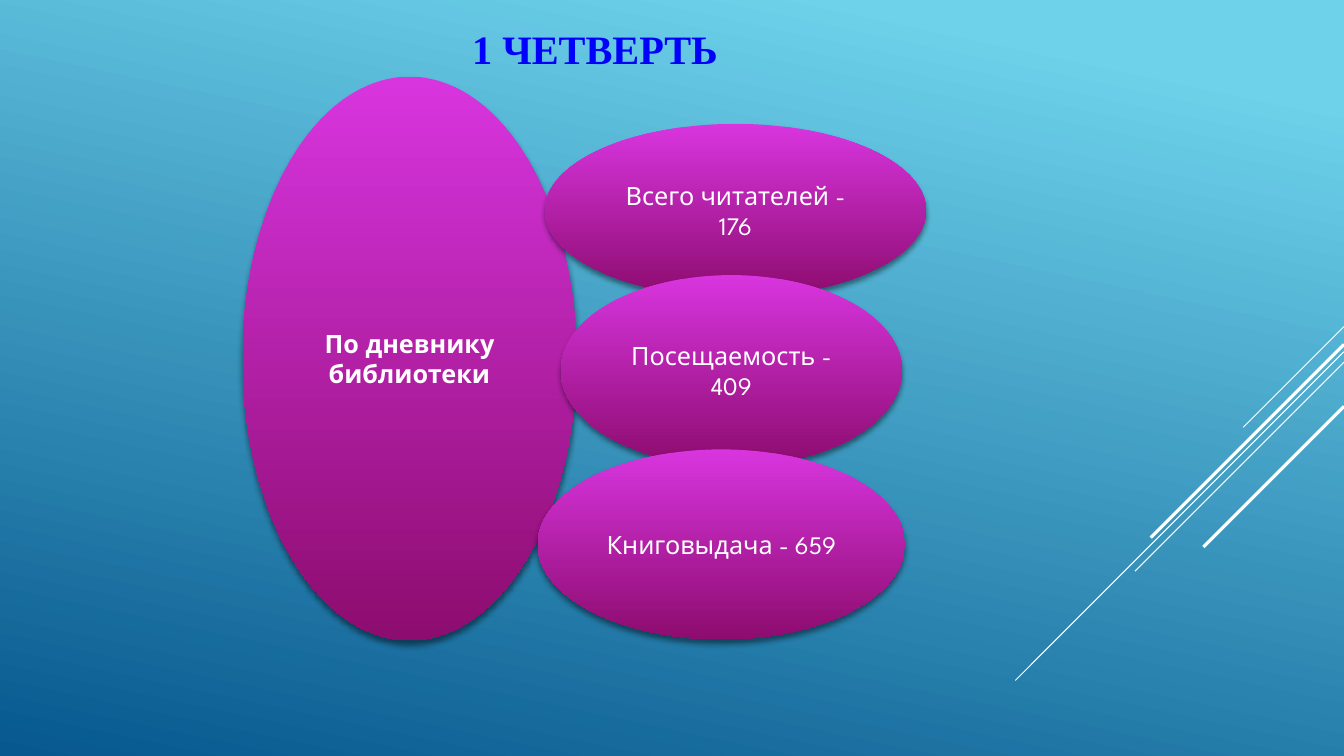
from dataclasses import dataclass

from lxml.etree import SubElement
from pptx import Presentation
from pptx.dml.color import RGBColor
from pptx.dml.fill import FillFormat
from pptx.enum.shapes import MSO_CONNECTOR as CONN, MSO_SHAPE as SHAPE
from pptx.enum.text import MSO_ANCHOR as ANCHOR, PP_ALIGN as ALIGN
from pptx.oxml.ns import qn
from pptx.slide import Slide
from pptx.text.text import TextFrame
from pptx.util import Emu, Pt

EMU_PER_PX = 9525
SLIDE_W, SLIDE_H = 1280, 720


@dataclass(frozen=True)
class Theme:
    sky: tuple[str, str] = ("6ED2EB", "06588E")
    bubble: tuple[str, str] = ("D835DF", "8D0C6F")
    white: str = "FFFFFF"
    title: str = "0000FF"
    shadow: str = "000000"
    title_font: str = "Times New Roman"
    body_font: str = "League Spartan"
    title_size: float = 28.8
    body_size: float = 18
    thin: float = 0.75
    thick: float = 2.25


THEME = Theme()


@dataclass(frozen=True)
class Bubble:
    text: str
    left: int
    top: int
    width: int
    height: int
    kind: SHAPE = SHAPE.FLOWCHART_CONNECTOR
    bold: bool = False


@dataclass(frozen=True)
class Ray:
    """A 45-degree line running down and left from the right edge."""
    top: int
    run: int
    weight: float = THEME.thin


RAYS = [
    Ray(311, 96),
    Ray(335, 313),
    Ray(345, 199),
    Ray(328, 184, THEME.thick),
    Ray(387, 134, THEME.thick),
]
BUBBLES = [
    Bubble("По дневнику библиотеки", 231, 73, 318, 537, SHAPE.OVAL, True),
    Bubble("Всего читателей - 176", 519, 118, 363, 165),
    Bubble("Посещаемость - 409", 534, 262, 325, 182),
    Bubble("Книговыдача - 659", 512, 428, 350, 181),
]


def px(n: int) -> Emu:
    return Emu(n * EMU_PER_PX)


def rgb(color: str) -> RGBColor:
    return RGBColor.from_string(color)


def fill_gradient(fill: FillFormat, colors: tuple[str, str],
                  clockwise: int, start: float = 0) -> None:
    fill.gradient()
    fill.gradient_angle = 360 - clockwise
    for stop, color, position in zip(fill.gradient_stops, colors, (start, 1)):
        stop.color.rgb = rgb(color)
        stop.position = position


def set_text(tf: TextFrame, text: str, font: str, size: float, color: str,
             bold: bool, align: ALIGN) -> None:
    tf.text = text
    tf.word_wrap = True
    tf.vertical_anchor = ANCHOR.MIDDLE
    p = tf.paragraphs[0]
    p.alignment = align
    r = p.runs[0]
    r.font.name, r.font.size, r.font.bold = font, Pt(size), bold
    r.font.color.rgb = rgb(color)


def add_ray(slide: Slide, ray: Ray) -> None:
    line = slide.shapes.add_connector(
        CONN.STRAIGHT, px(SLIDE_W), px(ray.top),
        px(SLIDE_W - ray.run), px(ray.top + ray.run))
    line.line.color.rgb = rgb(THEME.white)
    line.line.width = Pt(ray.weight)
    SubElement(line._element.spPr, qn("a:effectLst"))


def add_bubble(slide: Slide, bubble: Bubble) -> None:
    sp = slide.shapes.add_shape(
        bubble.kind, px(bubble.left), px(bubble.top),
        px(bubble.width), px(bubble.height))
    fill_gradient(sp.fill, THEME.bubble, 90)
    sp.line.fill.background()
    set_text(sp.text_frame, bubble.text, THEME.body_font, THEME.body_size,
             THEME.white, bubble.bold, ALIGN.CENTER)

    # Soft shadow below the bubble
    sp.shadow.inherit = False
    effects = sp._element.spPr.find(qn("a:effectLst"))
    shadow = SubElement(effects, qn("a:outerShdw"), blurRad=str(Pt(4)),
                        dist=str(Pt(3)), dir="5400000", rotWithShape="0")
    color = SubElement(shadow, qn("a:srgbClr"), val=THEME.shadow)
    SubElement(color, qn("a:alpha"), val="46000")


def add_title(slide: Slide, text: str) -> None:
    title = slide.shapes.title
    title.left, title.top = px(440), px(20)
    title.width, title.height = px(815), px(52)
    set_text(title.text_frame, text, THEME.title_font, THEME.title_size,
             THEME.title, True, ALIGN.LEFT)


def main() -> None:
    prs = Presentation()
    prs.slide_width, prs.slide_height = px(SLIDE_W), px(SLIDE_H)
    slide = prs.slides.add_slide(prs.slide_layouts[5])

    # Background and decorative rays
    fill_gradient(slide.background.fill, THEME.sky, 102, start=0.1)
    for ray in RAYS:
        add_ray(slide, ray)

    # Library figures and heading
    for bubble in BUBBLES:
        add_bubble(slide, bubble)
    add_title(slide, "1 ЧЕТВЕРТЬ")

    prs.save("out.pptx")


if __name__ == "__main__":
    main()
